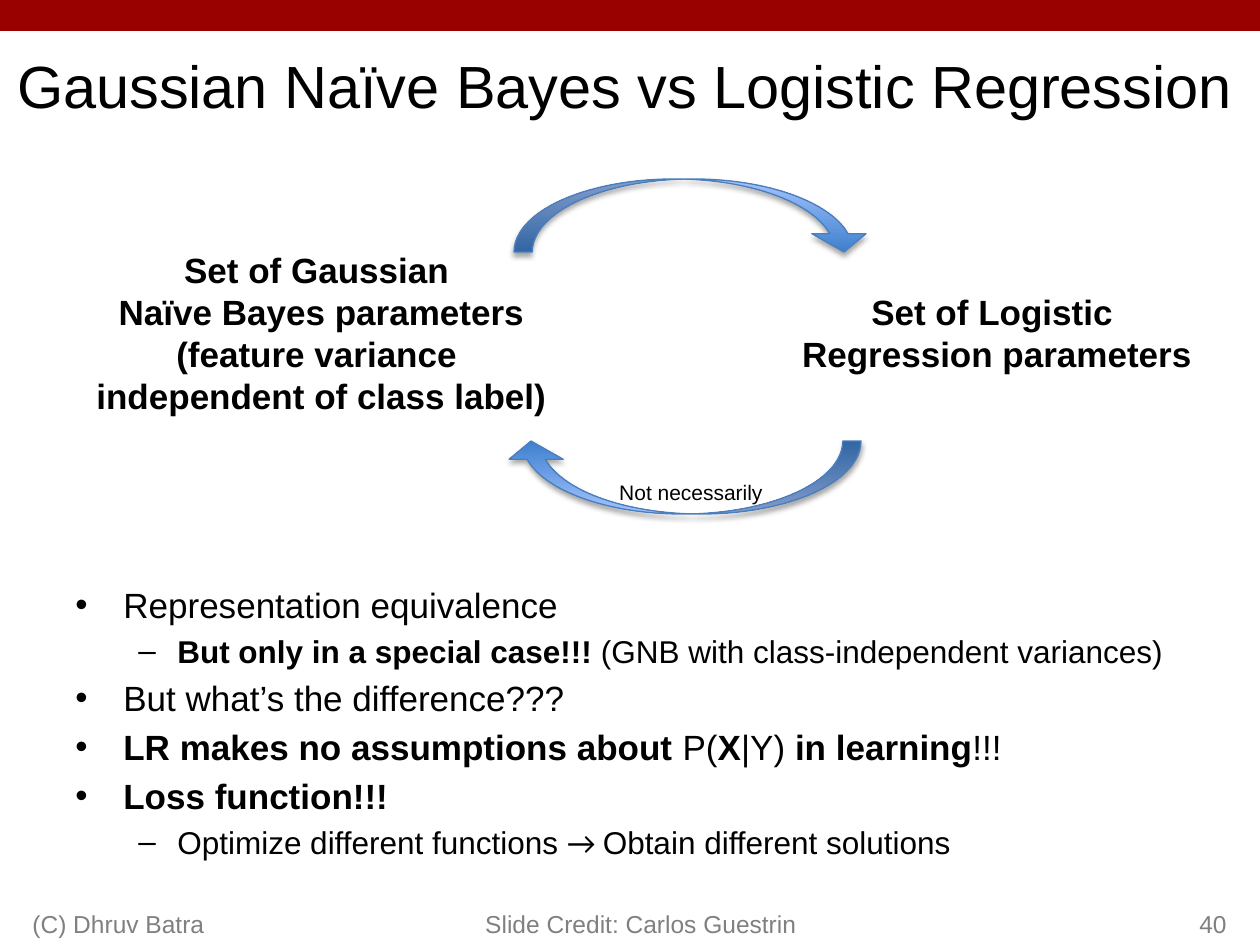
from lxml import etree
from pptx import Presentation, util as u
from pptx.dml.color import RGBColor
from pptx.enum import shapes, text
from pptx.oxml.ns import qn

BLACK = RGBColor(0, 0, 0)
GREY = RGBColor(0x80, 0x80, 0x80)
RED = RGBColor(0x99, 0, 0)
DEEP = RGBColor(0x3F, 0x80, 0xCE)
PALE = RGBColor(0xA4, 0xC4, 0xFF)
EDGE = RGBColor(0x4B, 0x7E, 0xBC)
LEFT, MID, RIGHT = text.PP_ALIGN.LEFT, text.PP_ALIGN.CENTER, text.PP_ALIGN.RIGHT
TOP, CORE, BASE = (text.MSO_ANCHOR.TOP, text.MSO_ANCHOR.MIDDLE,
                   text.MSO_ANCHOR.BOTTOM)

TITLE = "Gaussian Naïve Bayes vs Logistic Regression"
POINTS = [
    (0, [("Representation equivalence", False)]),
    (1, [("But only in a special case!!! ", True),
         ("(GNB with class-independent variances)", False)]),
    (0, [("But what’s the difference???", False)]),
    (0, [("LR makes no assumptions about", True), (" P(", False), ("X", True),
         ("|Y) ", False), ("in learning", True), ("!!!", False)]),
    (0, [("Loss function!!!", True)]),
    (1, [("Optimize different functions ", False), ("→ ", False),
         ("Obtain different solutions", False)]),
]
LEVELS = [("•", 20, 48, 48), ("–", 18, 102, 39)]
LABELS = [
    ("Set of Gaussian \vNaïve Bayes parameters\v(feature variance \v"
     "independent of class label)", (82, 242, 479, 183), 20, True),
    ("Set of Logistic \vRegression parameters", (788, 284, 418, 97), 20, True),
    ("Not necessarily", (606, 473, 170, 38), 12, False),
]
FOOTS = [
    ("(C) Dhruv Batra", (20, 882, 399, 63), LEFT),
    ("Slide Credit: Carlos Guestrin", (441, 882, 368, 63), RIGHT),
    ("40", (977, 882, 262, 63), RIGHT),
]
ARROWS = [((514, 179, 357, 73), 0), ((504, 441, 357, 73), 180)]


def px(n):
    return u.Inches(n / 126)


def style(run, size, color=BLACK, bold=False, face="Arial"):
    font = run.font
    font.name, font.size, font.bold = face, u.Pt(size), bold
    font.color.rgb = color


def write(slide, words, box, size, color, align, anchor, bold=False, wrap=True):
    frame = slide.shapes.add_textbox(*map(px, box)).text_frame
    frame.word_wrap, frame.vertical_anchor = wrap, anchor
    para = frame.paragraphs[0]
    para.text, para.alignment = words, align
    for run in para.runs:
        style(run, size, color, bold)


def head(slide):
    title = slide.shapes.title
    title.left, title.top, title.width, title.height = map(px, (0, -10, 1250, 189))
    frame = title.text_frame
    frame.text = TITLE
    frame.auto_size = text.MSO_AUTO_SIZE.NONE
    frame.vertical_anchor = CORE
    frame.paragraphs[0].alignment = MID
    style(frame.paragraphs[0].runs[0], 34)


def band(slide):
    bar = slide.shapes.add_shape(shapes.MSO_SHAPE.RECTANGLE,
                                 0, 0, px(1260), px(31))
    bar.shadow.inherit = False
    bar.fill.solid()
    bar.fill.fore_color.rgb = RED
    bar.line.fill.background()


def arrow(slide, box, turn):
    bow = slide.shapes.add_shape(shapes.MSO_SHAPE.CURVED_DOWN_ARROW, *map(px, box))
    bow.rotation = turn
    bow.adjustments[1] = 0.74
    bow.fill.gradient()
    bow.fill.gradient_angle = 90
    for stop, color in zip(bow.fill.gradient_stops, (DEEP, PALE)):
        stop.color.rgb = color
    bow.line.color.rgb = EDGE
    bow.line.width = u.Pt(0.75)
    bow.shadow.inherit = False
    glow = bow.element.spPr.find(qn("a:effectLst"))
    shade = etree.SubElement(glow, qn("a:outerShdw"), blurRad=str(u.Pt(3.1)),
                             dist=str(u.Pt(1.8)), dir="5400000", rotWithShape="0")
    tint = etree.SubElement(shade, qn("a:srgbClr"), val=str(BLACK))
    etree.SubElement(tint, qn("a:alpha"), val="35000")


def points(slide):
    frame = slide.shapes.add_textbox(*map(px, (63, 577, 1197, 347))).text_frame
    frame.word_wrap = True
    for i, (level, runs) in enumerate(POINTS):
        mark, size, left, hang = LEVELS[level]
        para = frame.add_paragraph() if i else frame.paragraphs[0]
        para.level = level
        para.space_before = u.Pt(size / 5)
        props = para._p.get_or_add_pPr()
        props.set("marL", str(px(left)))
        props.set("indent", str(-px(hang)))
        etree.SubElement(props, qn("a:buFont"), typeface="Arial")
        etree.SubElement(props, qn("a:buChar"), char=mark)
        for words, bold in runs:
            run = para.add_run()
            run.text = words
            face = "Calibri" if "→" in words else "Arial"
            style(run, size, BLACK, bold, face)


def main():
    deck = Presentation()
    deck.slide_width, deck.slide_height = px(1260), px(945)
    slide = deck.slides.add_slide(deck.slide_layouts[5])
    band(slide)
    head(slide)
    points(slide)
    for box, turn in ARROWS:
        arrow(slide, box, turn)
    for words, box, size, bold in LABELS:
        write(slide, words, box, size, BLACK, MID, TOP, bold, False)
    for words, box, align in FOOTS:
        write(slide, words, box, 14, GREY, align, BASE)
    deck.save("out.pptx")


if __name__ == "__main__":
    main()
